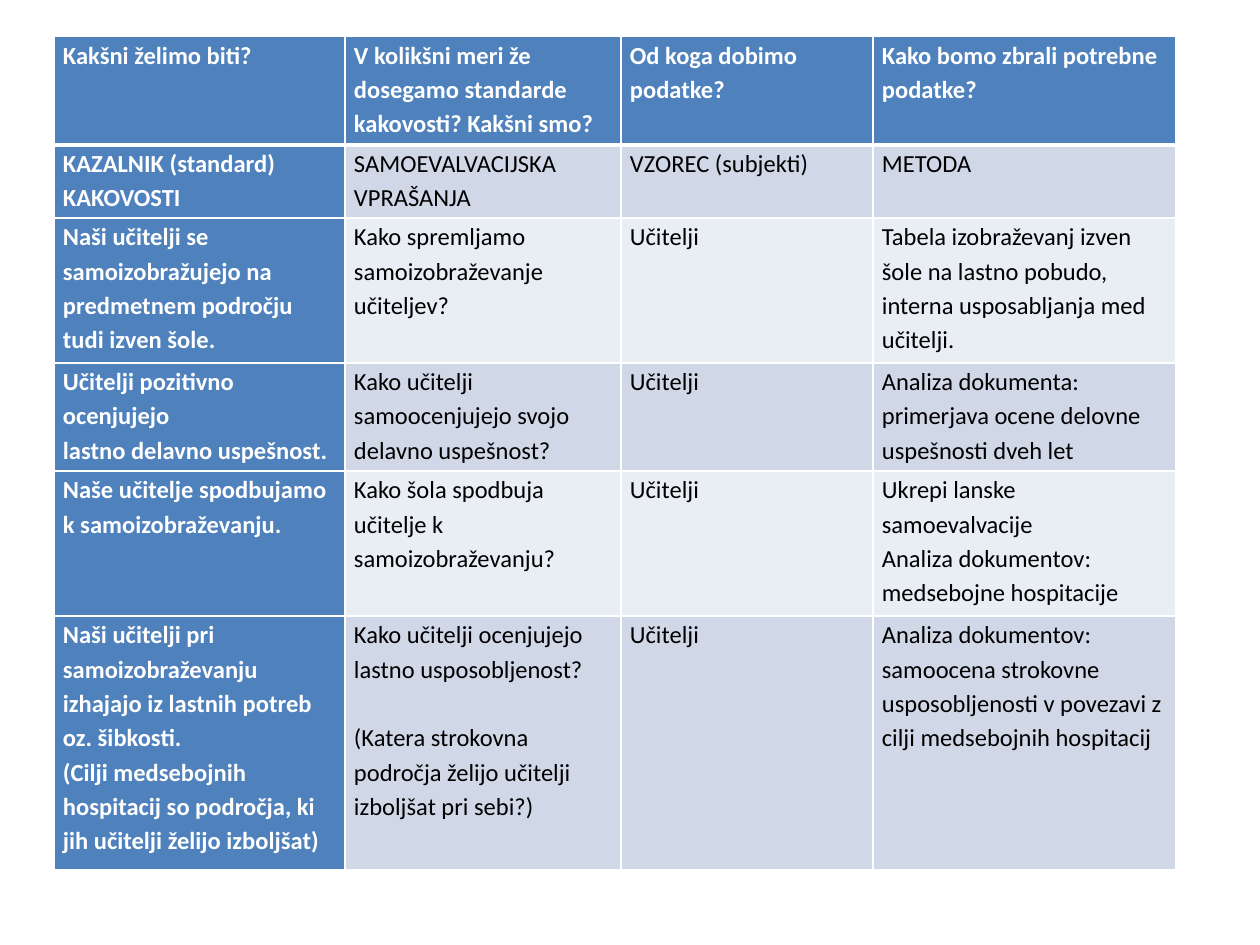
from lxml.etree import SubElement
from pptx import Presentation
from pptx.dml.color import RGBColor
from pptx.oxml.ns import qn
from pptx.util import Inches, Pt

COLORS = {
    "blue": "4F81BD",
    "band_dark": "D0D8E8",
    "band_light": "E9EDF4",
    "white": "FFFFFF",
    "black": "000000",
}
COL_WIDTHS = [2.31, 2.19, 2, 2.4]
ROW_HEIGHTS = [0.86, 0.58, 1.15, 0.86, 1.15, 2.01]
LINE_GAP = Pt(19.6)
ROWS = [
    [
        "Kakšni želimo biti?",
        "V kolikšni meri že dosegamo standarde kakovosti? Kakšni smo?",
        "Od koga dobimo podatke?",
        "Kako bomo zbrali potrebne podatke?",
    ],
    [
        "KAZALNIK (standard)\nKAKOVOSTI",
        "SAMOEVALVACIJSKA VPRAŠANJA",
        "VZOREC (subjekti)",
        "METODA",
    ],
    [
        "Naši učitelji se samoizobražujejo na predmetnem področju tudi izven šole.",
        "Kako spremljamo samoizobraževanje učiteljev?",
        "Učitelji",
        "Tabela izobraževanj izven šole na lastno pobudo,\n"
        "interna usposabljanja med učitelji.",
    ],
    [
        "Učitelji pozitivno ocenjujejo\nlastno delavno uspešnost.",
        "Kako učitelji samoocenjujejo svojo delavno uspešnost?",
        "Učitelji",
        "Analiza dokumenta: primerjava ocene delovne uspešnosti dveh let",
    ],
    [
        "Naše učitelje spodbujamo k samoizobraževanju.",
        "Kako šola spodbuja učitelje k samoizobraževanju?",
        "Učitelji",
        "Ukrepi lanske samoevalvacije\nAnaliza dokumentov: medsebojne hospitacije",
    ],
    [
        "Naši učitelji pri samoizobraževanju izhajajo iz lastnih potreb oz. šibkosti.\n"
        "(Cilji medsebojnih hospitacij so področja, ki jih učitelji želijo izboljšat)",
        "Kako učitelji ocenjujejo lastno usposobljenost?\n"
        "(Katera strokovna področja želijo učitelji izboljšat pri sebi?)",
        "Učitelji",
        "Analiza dokumentov: samoocena strokovne usposobljenosti "
        "v povezavi z cilji medsebojnih hospitacij",
    ],
]


def rgb(name):
    return RGBColor.from_string(COLORS[name])


def set_borders(cell, top, bottom):
    tc_pr = cell._tc.get_or_add_tcPr()
    for side, width in (("L", 1), ("R", 1), ("T", top), ("B", bottom)):
        ln = SubElement(tc_pr, qn(f"a:ln{side}"), w=str(Pt(width)))
        fill = SubElement(ln, qn("a:solidFill"))
        SubElement(fill, qn("a:srgbClr"), val=COLORS["white"])


def fill_cell(cell, text, fill, emphasized):
    cell.margin_left = cell.margin_right = Inches(0.07)
    cell.margin_top = cell.margin_bottom = 0
    cell.fill.solid()
    cell.fill.fore_color.rgb = rgb(fill)
    cell.text = text
    for p in cell.text_frame.paragraphs:
        p.line_spacing = 1.15
        p.font.name = "Calibri"
        p.font.size = Pt(14)
        p.font.bold = emphasized
        p.font.color.rgb = rgb("white" if emphasized else "black")


def add_quality_table(s):
    frame = s.shapes.add_table(
        len(ROWS), len(COL_WIDTHS), Inches(0.43), Inches(0.29),
        Inches(sum(COL_WIDTHS)), Inches(sum(ROW_HEIGHTS)),
    )
    table = frame.table
    for column, width in zip(table.columns, COL_WIDTHS):
        column.width = Inches(width)
    for row, height in zip(table.rows, ROW_HEIGHTS):
        row.height = Inches(height)
    for i, texts in enumerate(ROWS):
        band = "band_dark" if i % 2 else "band_light"
        for j, text in enumerate(texts):
            cell = table.cell(i, j)
            emphasized = i == 0 or j == 0
            set_borders(cell, 3 if i == 1 else 1, 3 if i == 0 else 1)
            fill_cell(cell, text, "blue" if emphasized else band, emphasized)
    return table


def main():
    prs = Presentation()
    prs.slide_width, prs.slide_height = Inches(10), Inches(7.5)
    s = prs.slides.add_slide(prs.slide_layouts[6])
    table = add_quality_table(s)
    table.cell(5, 1).text_frame.paragraphs[1].space_before = LINE_GAP
    prs.save("out.pptx")


if __name__ == "__main__":
    main()
